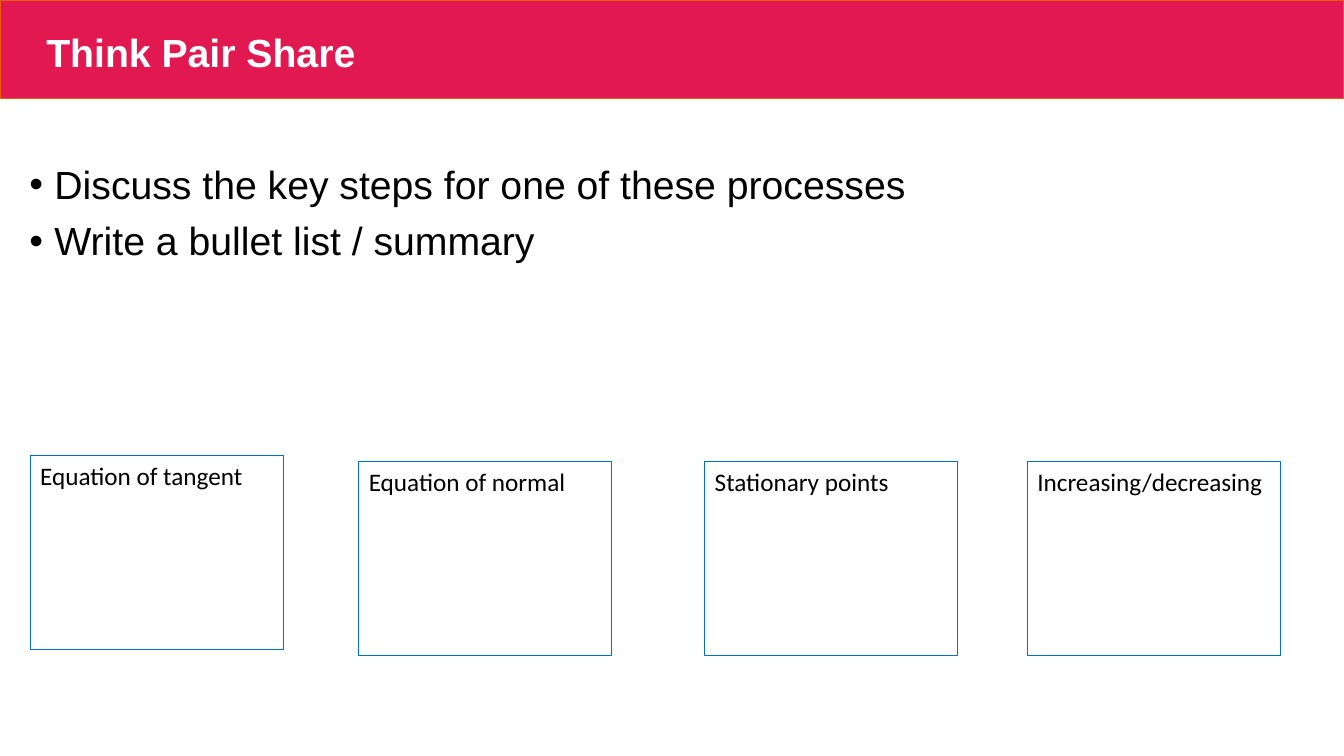
import dataclasses

import pptx
import pptx.dml.color
import pptx.enum.shapes
import pptx.enum.text
import pptx.shapes.autoshape
import pptx.slide
import pptx.text.text
import pptx.util

EMU_PER_PX = 9144
TOP = pptx.enum.text.MSO_ANCHOR.TOP
BOTTOM = pptx.enum.text.MSO_ANCHOR.BOTTOM


@dataclasses.dataclass(frozen=True)
class Theme:
    band: str = "E21951"
    band_line: str = "EA5B0C"
    box_line: str = "0070C0"
    light: str = "FFFFFF"
    dark: str = "000000"
    main_font: str = "Arial"
    box_font: str = "Calibri"
    main_size: int = 28
    box_size: int = 18


@dataclasses.dataclass(frozen=True)
class Area:
    left: int
    top: int
    width: int
    height: int


@dataclasses.dataclass(frozen=True)
class ProcessBox:
    label: str
    left: int
    top: int = 458


THEME = Theme()
SLIDE_AREA = Area(0, 0, 1333, 750)
BAND_AREA = Area(0, 0, 1333, 98)
TITLE_AREA = Area(36, 19, 1260, 61)
BODY_AREA = Area(19, 159, 1238, 174)
BOX_WIDTH, BOX_HEIGHT = 251, 192
BULLET_INDENT = 25

TITLE = "Think Pair Share"
TASKS = [
    "Discuss the key steps for one of these processes",
    "Write a bullet list / summary",
]
PROCESS_BOXES = [
    ProcessBox("Equation of tangent", 30, 452),
    ProcessBox("Equation of normal", 356),
    ProcessBox("Stationary points", 699),
    ProcessBox("Increasing/decreasing", 1019),
]


def px(length: int) -> pptx.util.Emu:
    return pptx.util.Emu(length * EMU_PER_PX)


def color(value: str) -> pptx.dml.color.RGBColor:
    return pptx.dml.color.RGBColor.from_string(value)


def place(shape: pptx.shapes.autoshape.Shape, area: Area) -> None:
    shape.left, shape.top = px(area.left), px(area.top)
    shape.width, shape.height = px(area.width), px(area.height)


def set_frame(frame: pptx.text.text.TextFrame, anchor: pptx.enum.text.MSO_ANCHOR) -> None:
    frame.word_wrap = True
    frame.auto_size = pptx.enum.text.MSO_AUTO_SIZE.NONE
    frame.vertical_anchor = anchor


def style_paragraph(
    paragraph: pptx.text.text._Paragraph, font: str, size: int, text_color: str, bold: bool = False
) -> None:
    paragraph.alignment = pptx.enum.text.PP_ALIGN.LEFT
    paragraph.font.name = font
    paragraph.font.size = pptx.util.Pt(size)
    paragraph.font.color.rgb = color(text_color)
    paragraph.font.bold = bold


def add_rectangle(
    slide: pptx.slide.Slide, area: Area, line_color: str, line_width: float
) -> pptx.shapes.autoshape.Shape:
    rectangle = slide.shapes.add_shape(
        pptx.enum.shapes.MSO_SHAPE.RECTANGLE,
        px(area.left), px(area.top), px(area.width), px(area.height),
    )
    rectangle.shadow.inherit = False
    rectangle.fill.background()
    rectangle.line.color.rgb = color(line_color)
    rectangle.line.width = pptx.util.Pt(line_width)
    return rectangle


def add_title(slide: pptx.slide.Slide) -> None:
    band = add_rectangle(slide, BAND_AREA, THEME.band_line, 1)
    band.fill.solid()
    band.fill.fore_color.rgb = color(THEME.band)
    title = slide.shapes.title
    title.element.addprevious(band.element)
    place(title, TITLE_AREA)
    title.text_frame.text = TITLE
    set_frame(title.text_frame, BOTTOM)
    paragraph = title.text_frame.paragraphs[0]
    style_paragraph(paragraph, THEME.main_font, THEME.main_size, THEME.light, bold=True)
    paragraph.line_spacing = 0.9


def add_tasks(slide: pptx.slide.Slide) -> None:
    body = slide.placeholders[1]
    place(body, BODY_AREA)
    body.text_frame.text = "\n".join(TASKS)
    set_frame(body.text_frame, TOP)
    for paragraph in body.text_frame.paragraphs:
        style_paragraph(paragraph, THEME.main_font, THEME.main_size, THEME.dark)
        paragraph.line_spacing = 0.9
        paragraph.space_before = pptx.util.Pt(10)
        properties = paragraph._p.get_or_add_pPr()
        properties.set("marL", str(px(BULLET_INDENT)))
        properties.set("indent", str(px(-BULLET_INDENT)))


def add_process_box(slide: pptx.slide.Slide, box: ProcessBox) -> None:
    area = Area(box.left, box.top, BOX_WIDTH, BOX_HEIGHT)
    rectangle = add_rectangle(slide, area, THEME.box_line, 0.75)
    rectangle.text_frame.text = box.label
    set_frame(rectangle.text_frame, TOP)
    style_paragraph(
        rectangle.text_frame.paragraphs[0], THEME.box_font, THEME.box_size, THEME.dark
    )


def main() -> None:
    presentation = pptx.Presentation()
    presentation.slide_width = px(SLIDE_AREA.width)
    presentation.slide_height = px(SLIDE_AREA.height)
    slide = presentation.slides.add_slide(presentation.slide_layouts[1])
    add_title(slide)
    add_tasks(slide)
    for box in PROCESS_BOXES:
        add_process_box(slide, box)
    presentation.save("out.pptx")


if __name__ == "__main__":
    main()
